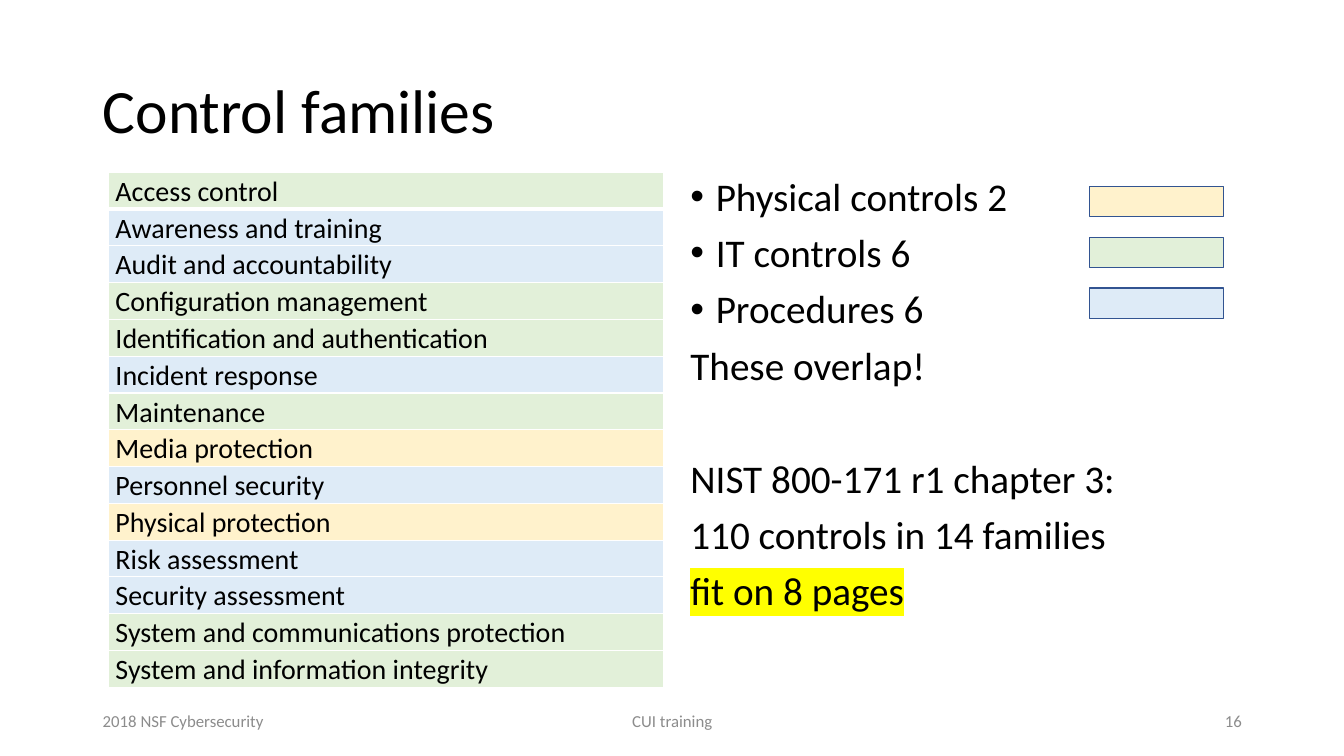
import dataclasses

import lxml.etree
import pptx
import pptx.dml.color
import pptx.enum.shapes
import pptx.enum.text
import pptx.oxml.ns
import pptx.slide
import pptx.util

Cm = pptx.util.Cm
Pt = pptx.util.Pt
ALIGN = pptx.enum.text.PP_ALIGN
ANCHOR = pptx.enum.text.MSO_ANCHOR
COLORS = {
    "text": "000000",
    "footer": "8C8C8C",
    "grid": "FFFFFF",
    "outline": "325491",
    "highlight": "FFFF00",
    "physical": "FFF2CC",
    "it": "E2F0D9",
    "procedure": "DEEBF7",
}
FAMILIES = [
    ("Access control", "it"),
    ("Awareness and training", "procedure"),
    ("Audit and accountability", "procedure"),
    ("Configuration management", "it"),
    ("Identification and authentication", "it"),
    ("Incident response", "procedure"),
    ("Maintenance", "it"),
    ("Media protection", "physical"),
    ("Personnel security", "procedure"),
    ("Physical protection", "physical"),
    ("Risk assessment", "procedure"),
    ("Security assessment", "procedure"),
    ("System and communications protection", "it"),
    ("System and information integrity", "it"),
]
SUMMARY = [
    ("Physical controls 2", {"bullet": True}),
    ("IT controls 6", {"bullet": True}),
    ("Procedures 6", {"bullet": True}),
    ("These overlap!", {}),
    ("NIST 800-171 r1 chapter 3:", {"before": 50.5}),
    ("110 controls in 14 families", {}),
    ("fit on 8 pages", {"highlight": "highlight"}),
]
FOOTERS = [
    ("2018 NSF Cybersecurity", 2.34, 7.62, ALIGN.LEFT),
    ("CUI training", 11.23, 11.43, ALIGN.CENTER),
    ("16", 23.93, 7.62, ALIGN.RIGHT),
]


def rgb(name):
    return pptx.dml.color.RGBColor.from_string(COLORS[name])


def color_element(tag, name):
    """Make a DrawingML element that holds one colour."""
    element = lxml.etree.Element(pptx.oxml.ns.qn(tag))
    lxml.etree.SubElement(element, pptx.oxml.ns.qn("a:srgbClr"), val=COLORS[name])
    return element


def write(paragraph, text, font="Calibri", size=28, color="text", align=ALIGN.LEFT,
          spacing=1.0, before=0, bullet=False, highlight=None):
    paragraph.alignment = align
    paragraph.line_spacing = spacing
    paragraph.space_before = Pt(before)
    run = paragraph.add_run()
    run.text = text
    run.font.name = font
    run.font.size = Pt(size)
    run.font.color.rgb = rgb(color)
    if bullet:
        properties = paragraph._p.get_or_add_pPr()
        properties.set("marL", str(Cm(0.64)))
        properties.set("indent", str(-Cm(0.64)))
        lxml.etree.SubElement(properties, pptx.oxml.ns.qn("a:buFont"), typeface="Arial")
        lxml.etree.SubElement(properties, pptx.oxml.ns.qn("a:buChar"), char="•")
    if highlight:
        fill = run._r.rPr.find(pptx.oxml.ns.qn("a:solidFill"))
        fill.addnext(color_element("a:highlight", highlight))


def add_borders(cell, bottom):
    """Put white borders round a cell, with a bottom line of the given width."""
    properties = cell._tc.get_or_add_tcPr()
    widths = {"a:lnL": 1, "a:lnR": 1, "a:lnT": 1, "a:lnB": bottom}
    for position, (tag, width) in enumerate(widths.items()):
        line = lxml.etree.Element(pptx.oxml.ns.qn(tag), w=str(Pt(width)))
        line.append(color_element("a:solidFill", "grid"))
        properties.insert(position, line)


@dataclasses.dataclass
class SlideBuilder:
    slide: pptx.slide.Slide

    def text(self, lines, left, top, width, height, anchor=ANCHOR.TOP, **style):
        """Add a text box; each line is a text with its own format."""
        box = self.slide.shapes.add_textbox(Cm(left), Cm(top), Cm(width), Cm(height))
        frame = box.text_frame
        frame.word_wrap = True
        frame.vertical_anchor = anchor
        for index, (text, extra) in enumerate(lines):
            paragraph = frame.add_paragraph() if index else frame.paragraphs[0]
            write(paragraph, text, **{**style, **extra})

    def table(self, rows, left, top, width, height):
        """Add a one-column table from pairs of text and fill colour."""
        frame = self.slide.shapes.add_table(
            len(rows), 1, Cm(left), Cm(top), Cm(width), Cm(height))
        table = frame.table
        table.horz_banding = False
        for index, (text, fill) in enumerate(rows):
            cell = table.cell(index, 0)
            cell.margin_left = cell.margin_right = Cm(0.19)
            cell.margin_top = cell.margin_bottom = 0
            cell.fill.solid()
            cell.fill.fore_color.rgb = rgb(fill)
            add_borders(cell, bottom=1 if index else 3)
            write(cell.text_frame.paragraphs[0], text, size=20, spacing=1.07)
            cell.text_frame.paragraphs[0].font.bold = False

    def swatch(self, fill, left, top, width, height):
        shape = self.slide.shapes.add_shape(
            pptx.enum.shapes.MSO_SHAPE.RECTANGLE,
            Cm(left), Cm(top), Cm(width), Cm(height))
        shape.shadow.inherit = False
        shape.fill.solid()
        shape.fill.fore_color.rgb = rgb(fill)
        shape.line.color.rgb = rgb("outline")
        shape.line.width = Pt(1)


def main():
    presentation = pptx.Presentation()
    presentation.slide_width = Cm(33.87)
    presentation.slide_height = Cm(19.05)
    builder = SlideBuilder(presentation.slides.add_slide(presentation.slide_layouts[6]))

    builder.text([("Control families", {})], 2.34, 1.02, 29.21, 3.68,
                 anchor=ANCHOR.MIDDLE, size=44, spacing=0.9)
    builder.text(SUMMARY, 17.15, 4.34, 14.4, 12.95, spacing=0.9, before=10)
    for text, left, width, align in FOOTERS:
        builder.text([(text, {})], left, 17.65, width, 1.02,
                     anchor=ANCHOR.MIDDLE, size=12, color="footer", align=align)
    builder.table(FAMILIES, 2.72, 4.34, 14.0, 12.98)
    for index, kind in enumerate(("physical", "it", "procedure")):
        builder.swatch(kind, 27.46, 4.7 + 1.28 * index, 3.38, 0.76)

    presentation.save("out.pptx")


if __name__ == "__main__":
    main()
